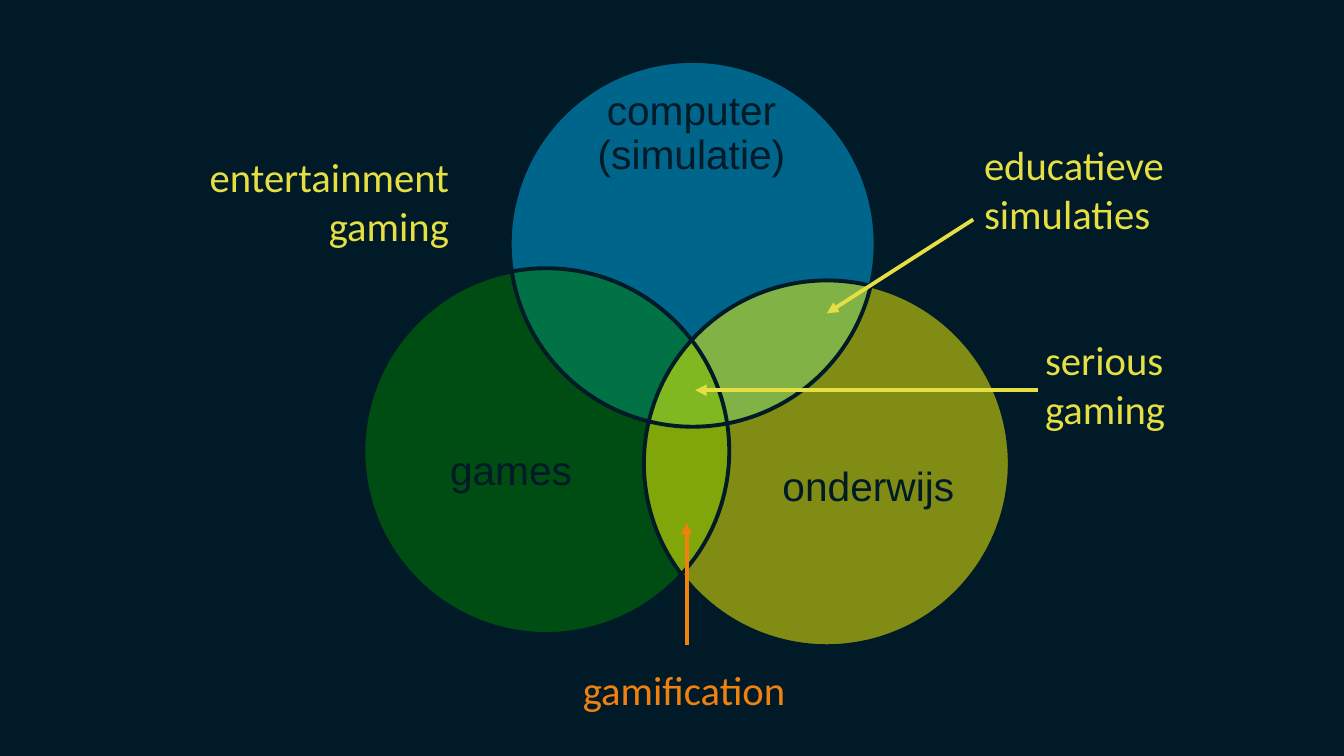
import pptx
import pptx.util
import pptx.dml.color
import pptx.enum.shapes
import pptx.enum.text
import pptx.oxml.ns
from lxml import etree

Inches = pptx.util.Inches
Pt = pptx.util.Pt
ALIGN = pptx.enum.text.PP_ALIGN
ANCHOR = pptx.enum.text.MSO_ANCHOR
qn = pptx.oxml.ns.qn

DARK = "011A27"
YELLOW = "E6DF44"
ORANGE = "F0810F"
SIZE = 3  # diameter of each circle

# left, top, fill
CIRCLES = [
    (4.18, 0.5, "00B0F0"),
    (2.98, 2.2, "008000"),
    (5.28, 2.3, "FFFF00"),
]
# text, left, top, width, height
NAMES = [
    ("computer\n(simulatie)", 4.67, 0.65, 2, 0.9),
    ("games", 3.19, 3.65, 2, 0.45),
    ("onderwijs", 6.12, 3.78, 2, 0.45),
]
# text, left, top, width, height, colour, alignment
NOTES = [
    ("serious gaming", 8.47, 2.7, 1.81, 0.91, YELLOW, ALIGN.LEFT),
    ("educatieve simulaties", 7.97, 1.1, 1.81, 0.91, YELLOW, ALIGN.LEFT),
    ("entertainment gaming", 1.58, 1.2, 2.2, 0.91, YELLOW, ALIGN.RIGHT),
    ("gamification", 4.68, 5.4, 2.11, 0.5, ORANGE, ALIGN.LEFT),
]
# start x, start y, end x, end y, colour
ARROWS = [
    (8.51, 3.2, 5.7, 3.2, YELLOW),
    (7.98, 1.8, 6.78, 2.57, YELLOW),
    (5.63, 5.29, 5.63, 4.29, ORANGE),
]


def paint(color, code):
    color.rgb = pptx.dml.color.RGBColor.from_string(code)


def add_disc(slide, left, top):
    disc = slide.shapes.add_shape(
        pptx.enum.shapes.MSO_SHAPE.OVAL,
        Inches(left), Inches(top), Inches(SIZE), Inches(SIZE))
    disc.shadow.inherit = False
    return disc


def add_area(slide, left, top, code):
    area = add_disc(slide, left, top)
    area.fill.solid()
    paint(area.fill.fore_color, code)
    area.line.fill.background()
    # Half transparent
    tint = area.fill._xPr.find(qn("a:solidFill"))[0]
    etree.SubElement(tint, qn("a:alpha"), val="50000")


def add_ring(slide, left, top):
    ring = add_disc(slide, left, top)
    ring.fill.background()
    paint(ring.line.color, DARK)
    ring.line.width = Pt(2.3)


def add_text(slide, text, left, top, width, height, code, align, font):
    box = slide.shapes.add_textbox(
        Inches(left), Inches(top), Inches(width), Inches(height))
    frame = box.text_frame
    frame.word_wrap = True
    para = frame.paragraphs[0]
    para.text = text
    para.alignment = align
    para.font.name = font
    para.font.size = Pt(24)
    paint(para.font.color, code)
    return frame


def add_name(slide, text, left, top, width, height):
    frame = add_text(slide, text, left, top, width, height,
                     DARK, ALIGN.CENTER, "Arial")
    frame.vertical_anchor = ANCHOR.MIDDLE
    frame.margin_top = frame.margin_bottom = 0
    frame.paragraphs[0].line_spacing = 0.9


def add_arrow(slide, x1, y1, x2, y2, code):
    arrow = slide.shapes.add_connector(
        pptx.enum.shapes.MSO_CONNECTOR.STRAIGHT,
        Inches(x1), Inches(y1), Inches(x2), Inches(y2))
    paint(arrow.line.color, code)
    arrow.line.width = Pt(2.25)
    etree.SubElement(arrow.line._get_or_add_ln(), qn("a:tailEnd"),
                     type="triangle")
    etree.SubElement(arrow._element.spPr, qn("a:effectLst"))


def main():
    deck = pptx.Presentation()
    deck.slide_width = Inches(11.02)
    deck.slide_height = Inches(6.2)
    slide = deck.slides.add_slide(deck.slide_layouts[6])
    slide.background.fill.solid()
    paint(slide.background.fill.fore_color, DARK)

    # Venn diagram: areas first, outlines above them
    for left, top, code in CIRCLES:
        add_area(slide, left, top, code)
    for left, top, code in CIRCLES:
        add_ring(slide, left, top)
    for name in NAMES:
        add_name(slide, *name)

    # Notes on the overlaps, with arrows
    for note in NOTES:
        add_text(slide, *note, "Calibri")
    for arrow in ARROWS:
        add_arrow(slide, *arrow)

    deck.save("out.pptx")


if __name__ == "__main__":
    main()
